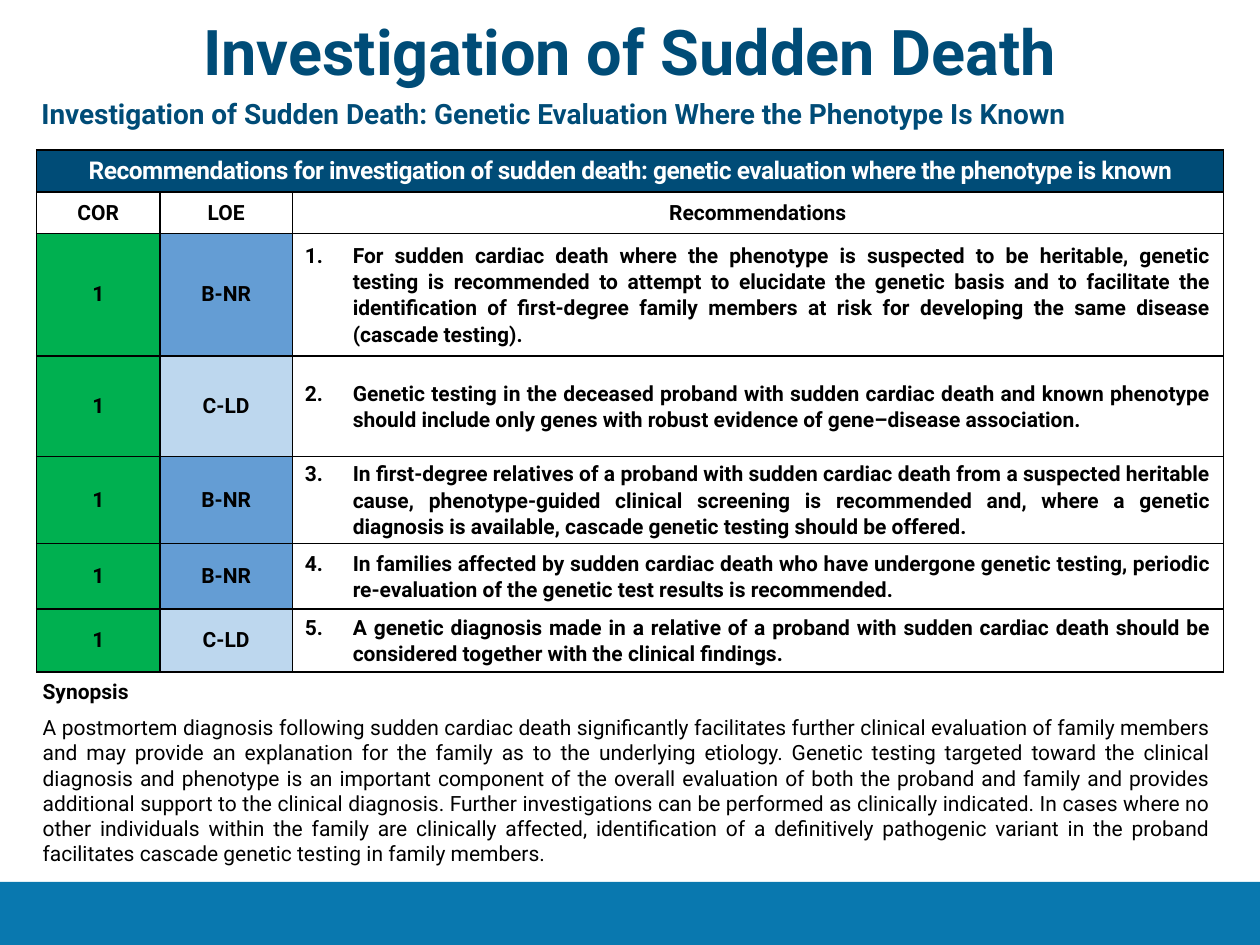
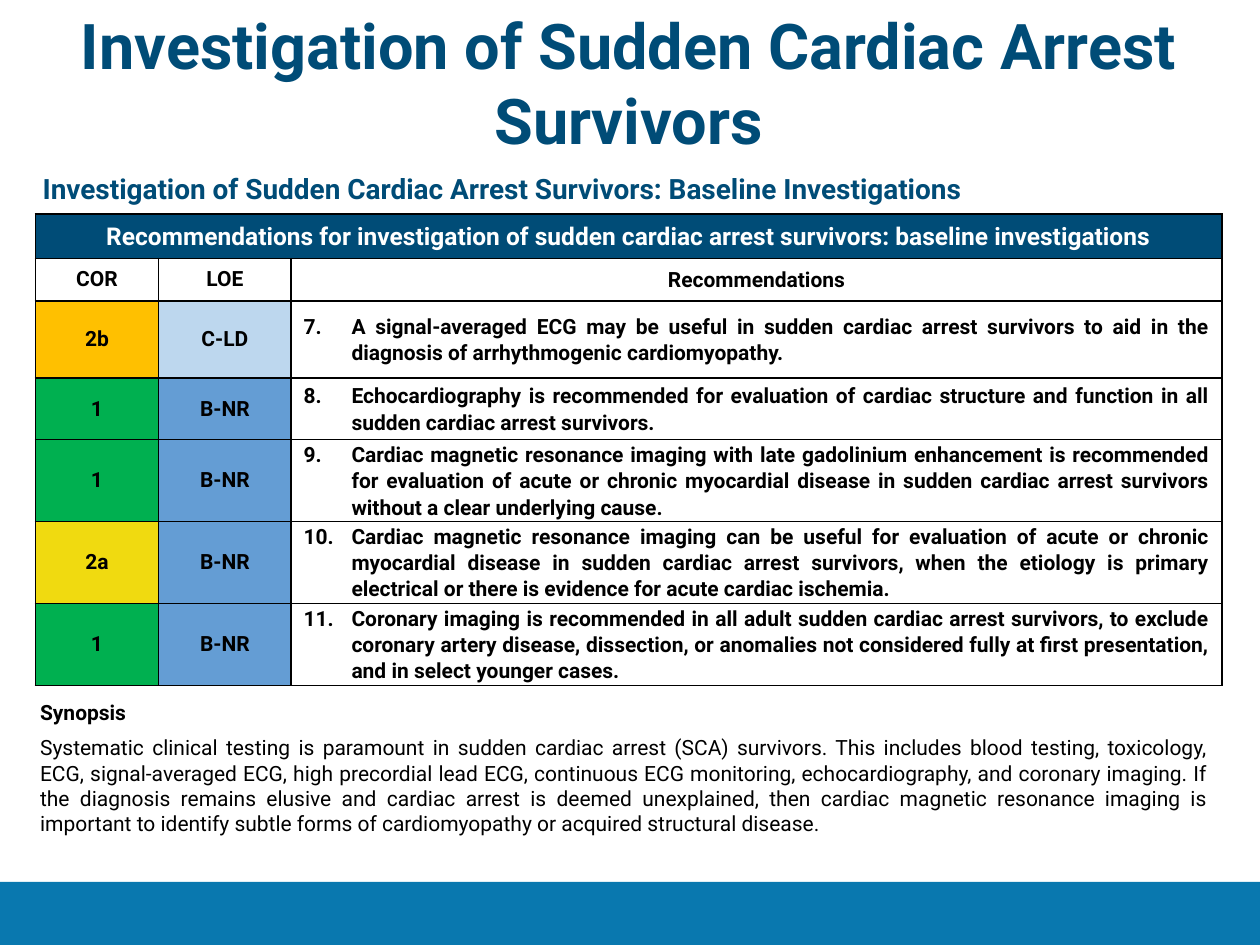
from dataclasses import dataclass
from typing import Optional

from lxml.etree import SubElement
from pptx import Presentation
from pptx.dml.color import RGBColor
from pptx.enum.shapes import MSO_SHAPE
from pptx.enum.text import MSO_ANCHOR, MSO_AUTO_SIZE, PP_ALIGN
from pptx.oxml.ns import qn
from pptx.util import Inches, Pt

SLIDE_WIDTH, SLIDE_HEIGHT = Inches(10), Inches(7.5)
GRID_COLUMNS, GRID_ROWS = 100, 75
FONT = "Roboto"
NAVY, BAND_BLUE, BLACK, WHITE = "004C77", "0978AF", "000000", "FFFFFF"
COR_FILLS = {"1": "00B050", "2a": "F0DA10", "2b": "FFC000"}
LOE_FILLS = {"B-NR": "649DD4", "C-LD": "BDD7EE"}
TABLE_COLUMNS = (9.8, 10.5, 73.9)
HEADINGS = ("COR", "LOE", "Recommendations")


@dataclass(frozen=True)
class Area:
    """A rectangle measured in grid columns and rows."""
    left: float
    top: float
    width: float
    height: float

    def box(self) -> tuple:
        return (across(self.left), down(self.top),
                across(self.width), down(self.height))


@dataclass(frozen=True)
class TextStyle:
    size: float
    color: str = BLACK
    bold: bool = True
    align: PP_ALIGN = PP_ALIGN.CENTER
    line_spacing: Optional[float] = None
    space_after: float = 0
    tracking: float = 0


@dataclass(frozen=True)
class Recommendation:
    cor: str
    loe: str
    wording: str
    height: float


@dataclass(frozen=True)
class Topic:
    title: str
    title_area: Area
    subtitle: str
    subtitle_area: Area
    banner: str
    banner_style: TextStyle
    table_area: Area
    header_heights: tuple
    first_number: int
    recommendations: tuple
    synopsis: str
    synopsis_area: Area


TITLE = TextStyle(36, NAVY)
SUBTITLE = TextStyle(16, NAVY, align=PP_ALIGN.LEFT)
HEADING = TextStyle(12)
WIDE_HEADING = TextStyle(12, line_spacing=1.07, space_after=8)
ADVICE = TextStyle(12, align=PP_ALIGN.JUSTIFY, line_spacing=1.07)
SYNOPSIS_HEADING = TextStyle(12, align=PP_ALIGN.JUSTIFY, space_after=6)
SYNOPSIS = TextStyle(12, bold=False, align=PP_ALIGN.JUSTIFY, space_after=6)

TOPICS = (
    Topic(
        "Investigation of Sudden Death", Area(2.3, 0.5, 95.4, 5),
        "Investigation of Sudden Death: Genetic Evaluation Where the Phenotype Is Known",
        Area(2.3, 7.2, 94.2, 3.7),
        "Recommendations for investigation of sudden death: genetic evaluation "
        "where the phenotype is known",
        TextStyle(14, WHITE, space_after=6, tracking=-0.3),
        Area(2.9, 11.9, 94.2, 41.4), (3.3, 3.3), 1,
        (
            Recommendation(
                "1", "B-NR",
                "For sudden cardiac death where the phenotype is suspected to be heritable, "
                "genetic testing is recommended to attempt to elucidate the genetic basis and "
                "to facilitate the identification of first-degree family members at risk for "
                "developing the same disease (cascade testing).", 9.7),
            Recommendation(
                "1", "C-LD",
                "Genetic testing in the deceased proband with sudden cardiac death and known "
                "phenotype should include only genes with robust evidence of gene–disease "
                "association.", 8),
            Recommendation(
                "1", "B-NR",
                "In first-degree relatives of a proband with sudden cardiac death from a "
                "suspected heritable cause, phenotype-guided clinical screening is recommended "
                "and, where a genetic diagnosis is available, cascade genetic testing should "
                "be offered.", 6.9),
            Recommendation(
                "1", "B-NR",
                "In families affected by sudden cardiac death who have undergone genetic "
                "testing, periodic re-evaluation of the genetic test results is "
                "recommended.", 5.2),
            Recommendation(
                "1", "C-LD",
                "A genetic diagnosis made in a relative of a proband with sudden cardiac death "
                "should be considered together with the clinical findings.", 5),
        ),
        "A postmortem diagnosis following sudden cardiac death significantly facilitates "
        "further clinical evaluation of family members and may provide an explanation for "
        "the family as to the underlying etiology. Genetic testing targeted toward the "
        "clinical diagnosis and phenotype is an important component of the overall evaluation "
        "of both the proband and family and provides additional support to the clinical "
        "diagnosis. Further investigations can be performed as clinically indicated. In cases "
        "where no other individuals within the family are clinically affected, identification "
        "of a definitively pathogenic variant in the proband facilitates cascade genetic "
        "testing in family members.",
        Area(2.4, 53.4, 94.7, 16)),
    Topic(
        "Investigation of Sudden Cardiac Arrest Survivors", Area(2.2, 0, 95.4, 11.7),
        "Investigation of Sudden Cardiac Arrest Survivors: Baseline Investigations",
        Area(2.4, 13.1, 94.2, 3.7),
        "Recommendations for investigation of sudden cardiac arrest survivors: "
        "baseline investigations",
        TextStyle(14, WHITE, line_spacing=1.07, space_after=8),
        Area(2.8, 17, 94.2, 37.4), (3.5, 3.4), 7,
        (
            Recommendation(
                "2b", "C-LD",
                "A signal-averaged ECG may be useful in sudden cardiac arrest survivors to aid "
                "in the diagnosis of arrhythmogenic cardiomyopathy.", 6.1),
            Recommendation(
                "1", "B-NR",
                "Echocardiography is recommended for evaluation of cardiac structure and "
                "function in all sudden cardiac arrest survivors.", 4.9),
            Recommendation(
                "1", "B-NR",
                "Cardiac magnetic resonance imaging with late gadolinium enhancement is "
                "recommended for evaluation of acute or chronic myocardial disease in sudden "
                "cardiac arrest survivors without a clear underlying cause.", 6.5),
            Recommendation(
                "2a", "B-NR",
                "Cardiac magnetic resonance imaging can be useful for evaluation of acute or "
                "chronic myocardial disease in sudden cardiac arrest survivors, when the "
                "etiology is primary electrical or there is evidence for acute cardiac "
                "ischemia.", 6.5),
            Recommendation(
                "1", "B-NR",
                "Coronary imaging is recommended in all adult sudden cardiac arrest survivors, "
                "to exclude coronary artery disease, dissection, or anomalies not considered "
                "fully at first presentation, and in select younger cases.", 6.5),
        ),
        "Systematic clinical testing is paramount in sudden cardiac arrest (SCA) survivors. "
        "This includes blood testing, toxicology, ECG, signal-averaged ECG, high precordial "
        "lead ECG, continuous ECG monitoring, echocardiography, and coronary imaging. If the "
        "diagnosis remains elusive and cardiac arrest is deemed unexplained, then cardiac "
        "magnetic resonance imaging is important to identify subtle forms of cardiomyopathy "
        "or acquired structural disease.",
        Area(2.2, 55, 94.7, 11.9)),
)


def across(columns: float) -> int:
    return round(SLIDE_WIDTH * columns / GRID_COLUMNS)


def down(rows: float) -> int:
    return round(SLIDE_HEIGHT * rows / GRID_ROWS)


def paint(fill, color: str) -> None:
    fill.solid()
    fill.fore_color.rgb = RGBColor.from_string(color)


def write(paragraph, wording: str, style: TextStyle) -> None:
    paragraph.text = wording
    paragraph.alignment = style.align
    paragraph.space_after = Pt(style.space_after)
    if style.line_spacing:
        paragraph.line_spacing = style.line_spacing
    for run in paragraph.runs:
        run.font.name = FONT
        run.font.size = Pt(style.size)
        run.font.bold = style.bold
        run.font.color.rgb = RGBColor.from_string(style.color)
        if style.tracking:
            run.font._element.set("spc", str(round(style.tracking * 100)))


def fill_frame(frame, *entries: tuple) -> None:
    """Write (wording, style) entries as paragraphs of a growing text frame."""
    frame.word_wrap = True
    frame.auto_size = MSO_AUTO_SIZE.SHAPE_TO_FIT_TEXT
    frame.vertical_anchor = MSO_ANCHOR.TOP
    for index, (wording, style) in enumerate(entries):
        paragraph = frame.add_paragraph() if index else frame.paragraphs[0]
        write(paragraph, wording, style)


def number(paragraph, start: int) -> None:
    """Give the paragraph a hanging automatic number."""
    properties = paragraph._p.get_or_add_pPr()
    indent = Inches(0.38)
    properties.set("marL", str(indent))
    properties.set("indent", str(-indent))
    SubElement(properties, qn("a:buFont"), typeface="+mj-lt")
    SubElement(properties, qn("a:buAutoNum"), type="arabicPeriod", startAt=str(start))


def outline(cell) -> None:
    properties = cell._tc.get_or_add_tcPr()
    for side in ("lnL", "lnR", "lnT", "lnB"):
        line = SubElement(properties, qn(f"a:{side}"), w=str(Pt(1)))
        SubElement(SubElement(line, qn("a:solidFill")), qn("a:srgbClr"), val=BLACK)


def set_cell(cell, wording: str, style: TextStyle, color: Optional[str] = None) -> None:
    cell.margin_left = cell.margin_right = Inches(0.1)
    cell.margin_top = cell.margin_bottom = 0
    cell.vertical_anchor = MSO_ANCHOR.MIDDLE
    write(cell.text_frame.paragraphs[0], wording, style)
    if color:
        paint(cell.fill, color)


def add_recommendations(slide, topic: Topic) -> None:
    heights = topic.header_heights + tuple(r.height for r in topic.recommendations)
    table = slide.shapes.add_table(
        len(heights), len(TABLE_COLUMNS), *topic.table_area.box()).table
    table.first_row = table.horz_banding = False
    for column, width in zip(table.columns, TABLE_COLUMNS):
        column.width = across(width)
    for row, height in zip(table.rows, heights):
        row.height = down(height)
    for cell in table.iter_cells():
        outline(cell)
        cell.fill.background()

    banner = table.cell(0, 0)
    banner.merge(table.cell(0, len(TABLE_COLUMNS) - 1))
    set_cell(banner, topic.banner, topic.banner_style, NAVY)
    banner.vertical_anchor = MSO_ANCHOR.TOP
    banner.margin_left = banner.margin_right = Inches(0.11)
    banner.margin_top = banner.margin_bottom = Inches(0.05)

    for column, heading in enumerate(HEADINGS):
        style = WIDE_HEADING if heading == "Recommendations" else HEADING
        set_cell(table.cell(1, column), heading, style)

    for index, item in enumerate(topic.recommendations):
        cor, loe, advice = (table.cell(index + 2, column) for column in range(3))
        set_cell(cor, item.cor, HEADING, COR_FILLS[item.cor])
        set_cell(loe, item.loe, HEADING, LOE_FILLS[item.loe])
        number(advice.text_frame.paragraphs[0], topic.first_number + index)
        set_cell(advice, item.wording, ADVICE)


def add_footer_band(slide) -> None:
    band = slide.shapes.add_shape(MSO_SHAPE.RECTANGLE, *Area(0, 70, 100, 5).box())
    band.shadow.inherit = False
    paint(band.fill, BAND_BLUE)
    band.line.fill.background()


def add_topic(deck, topic: Topic) -> None:
    slide = deck.slides.add_slide(deck.slide_layouts.get_by_name("Title Only"))
    add_footer_band(slide)
    add_recommendations(slide, topic)
    title = slide.shapes.title
    title.left, title.top, title.width, title.height = topic.title_area.box()
    fill_frame(title.text_frame, (topic.title, TITLE))
    subtitle = slide.shapes.add_textbox(*topic.subtitle_area.box())
    fill_frame(subtitle.text_frame, (topic.subtitle, SUBTITLE))
    synopsis = slide.shapes.add_textbox(*topic.synopsis_area.box())
    fill_frame(synopsis.text_frame, ("Synopsis", SYNOPSIS_HEADING),
               (topic.synopsis, SYNOPSIS))


def main() -> None:
    deck = Presentation()
    deck.slide_width, deck.slide_height = SLIDE_WIDTH, SLIDE_HEIGHT
    for topic in TOPICS:
        add_topic(deck, topic)
    deck.save("out.pptx")


if __name__ == "__main__":
    main()
